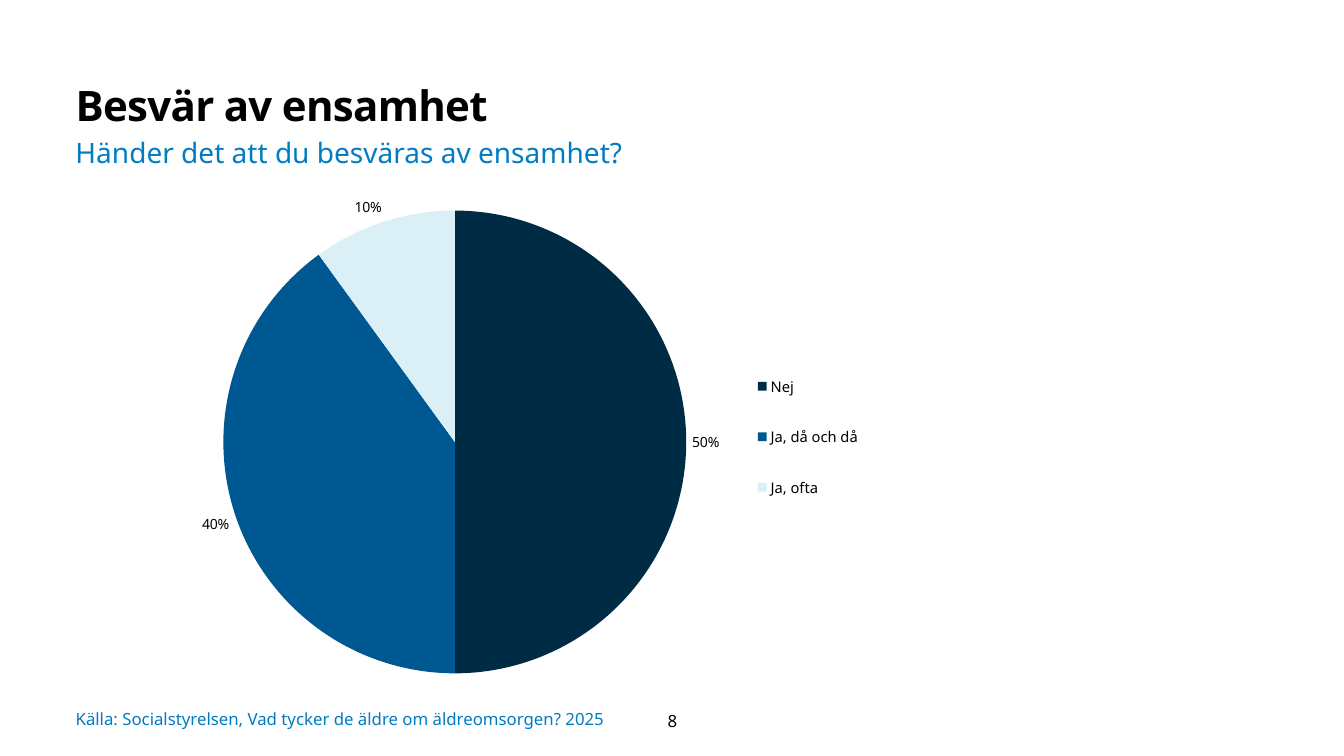
"""Build a slide with a pie chart on loneliness among older people."""
import pptx
import pptx.util
import pptx.chart.data
import pptx.dml.color
import pptx.enum.chart
import pptx.enum.text
import pptx.oxml

Inches = pptx.util.Inches
Pt = pptx.util.Pt
ALIGN = pptx.enum.text.PP_ALIGN
ANCHOR = pptx.enum.text.MSO_ANCHOR
FONT = "Noto Sans"
COLORS = {"black": "000000", "blue": "017CC1", "navy": "002B45",
          "mid": "005892", "pale": "DBF0F6"}

TITLE = "Besvär av ensamhet"
PAD = (0.1, 0.05, 0.1, 0.05)
NOTES = [
    ("Händer det att du besväras av ensamhet?", (0.65, 1.3, 10.31, 0.44),
     20, "blue", ALIGN.LEFT, ANCHOR.TOP, PAD),
    ("Källa: Socialstyrelsen, Vad tycker de äldre om äldreomsorgen? 2025",
     (0.75, 6.99, 5.91, 0.29), 12, "blue", ALIGN.LEFT, ANCHOR.MIDDLE, (0, 0, 0, 0)),
    ("8", (6.16, 6.95, 1.02, 0.4), 12, "black", ALIGN.CENTER, ANCHOR.MIDDLE, PAD),
]
SLICES = [("Nej", 50, "navy"), ("Ja, då och då", 40, "mid"), ("Ja, ofta", 10, "pale")]
CHART = (1.56, 1.78, 7.87, 5.16)
PLOT = (0.08, 0.06, 0.59, 0.89)
LEGEND = (0.75, 0.32, 0.14, 0.35)


def color(name):
    return pptx.dml.color.RGBColor.from_string(COLORS[name])


def style(font, size, name):
    font.name, font.size = FONT, Pt(size)
    font.color.rgb = color(name)


def write(shape, text, size, name, align, anchor, pad):
    frame = shape.text_frame
    frame.text = text
    frame.word_wrap = True
    frame.auto_size = pptx.enum.text.MSO_AUTO_SIZE.NONE
    frame.vertical_anchor = anchor
    (frame.margin_left, frame.margin_top,
     frame.margin_right, frame.margin_bottom) = map(Inches, pad)
    line = frame.paragraphs[0]
    line.alignment = align
    style(line.runs[0].font, size, name)
    return line


def layout(box, inner=False):
    parts = [("layoutTarget", "inner")] if inner else []
    parts += [("xMode", "edge"), ("yMode", "edge"), *zip("xywh", box)]
    body = "".join(f'<c:{tag} val="{val}"/>' for tag, val in parts)
    return pptx.oxml.parse_xml(
        '<c:layout xmlns:c="http://schemas.openxmlformats.org/drawingml/2006/chart">'
        f"<c:manualLayout>{body}</c:manualLayout></c:layout>")


def place(node, box, inner=False):
    for old in node.xpath("c:layout"):
        node.remove(old)
    spots = node.xpath("c:legendPos")
    node.insert(node.index(spots[0]) + 1 if spots else 0, layout(box, inner))


def draw_pie(slide):
    data = pptx.chart.data.CategoryChartData()
    data.categories = [label for label, _, _ in SLICES]
    data.add_series("Series 1", [val for _, val, _ in SLICES])
    chart = slide.shapes.add_chart(
        pptx.enum.chart.XL_CHART_TYPE.PIE, *map(Inches, CHART), data).chart
    chart.has_title = False
    style(chart.font, 10, "black")
    chart.has_legend = True
    chart.legend.position = pptx.enum.chart.XL_LEGEND_POSITION.RIGHT
    chart.legend.include_in_layout = False
    style(chart.legend.font, 10.5, "black")
    plot = chart.plots[0]
    plot.vary_by_categories = True
    for i, (_, _, name) in enumerate(SLICES):
        fill = plot.series[0].points[i].format.fill
        fill.solid()
        fill.fore_color.rgb = color(name)
    plot.has_data_labels = True
    labels = plot.data_labels
    labels.show_percentage, labels.show_value = True, False
    labels.number_format, labels.number_format_is_linked = "0%", False
    labels.position = pptx.enum.chart.XL_LABEL_POSITION.OUTSIDE_END
    style(labels.font, 10, "black")
    root = chart.element
    place(root.xpath(".//c:plotArea")[0], PLOT, True)
    place(root.xpath(".//c:legend")[0], LEGEND)


def main():
    deck = pptx.Presentation()
    deck.slide_width, deck.slide_height = Inches(13.33), Inches(7.5)
    slide = deck.slides.add_slide(deck.slide_layouts[5])
    title = slide.shapes.title
    title.left, title.top, title.width, title.height = map(
        Inches, (0.75, 0.74, 10.63, 0.58))
    line = write(title, TITLE, 30, "black", ALIGN.LEFT, ANCHOR.TOP, (0, 0, 0.1, 0.05))
    line.line_spacing = 1.1
    font = line.runs[0].font
    font.bold = True
    line.runs[0]._r.get_or_add_rPr().set("spc", "-50")
    draw_pie(slide)
    for text, box, *look in NOTES:
        write(slide.shapes.add_textbox(*map(Inches, box)), text, *look)
    deck.save("out.pptx")


if __name__ == "__main__":
    main()
